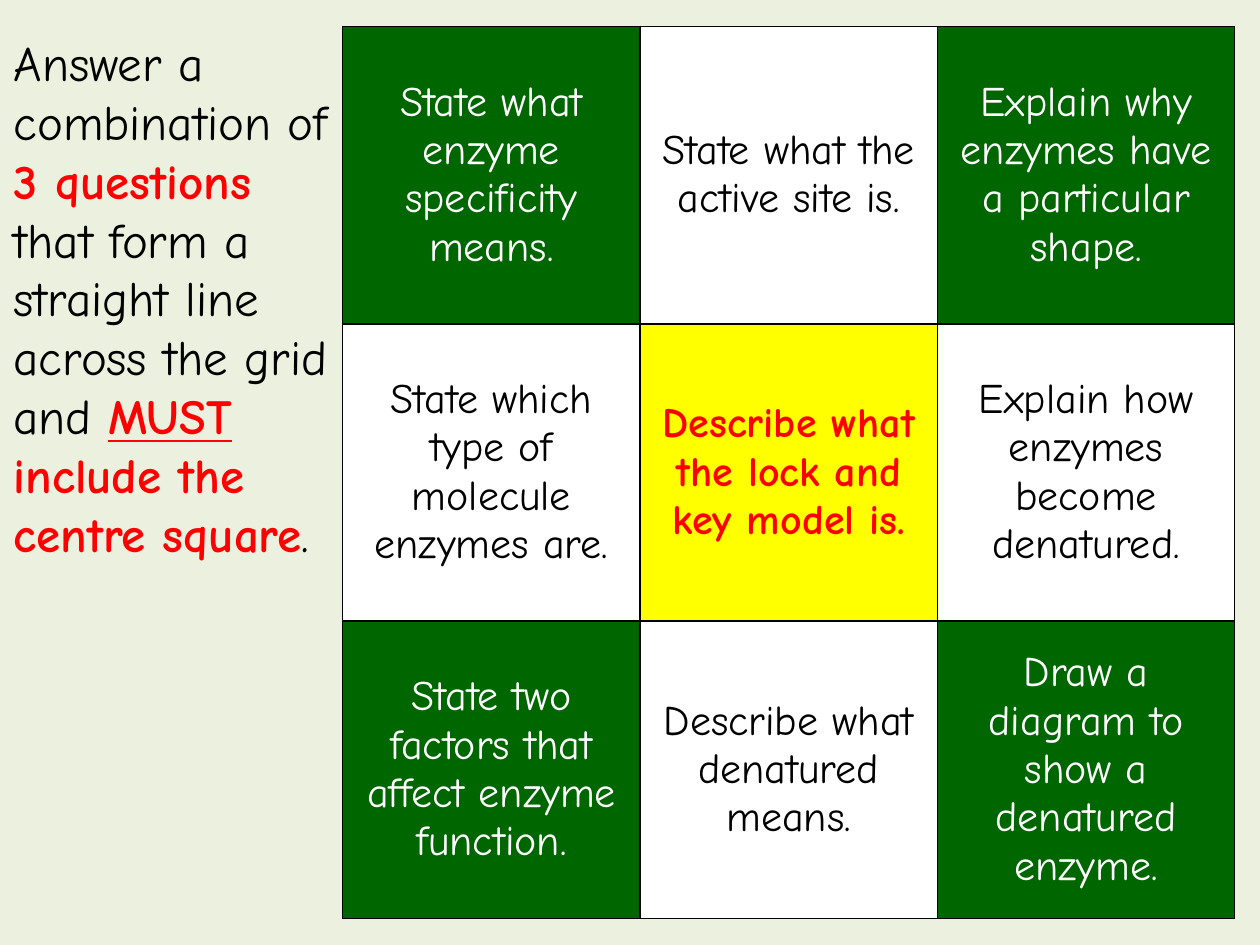
"""Build a slide with a three-by-three grid of enzyme questions."""
from lxml import etree
from pptx import Presentation
from pptx.dml.color import RGBColor
from pptx.enum.text import MSO_ANCHOR, MSO_AUTO_SIZE, PP_ALIGN
from pptx.oxml.ns import qn
from pptx.util import Inches, Pt

CENTER = PP_ALIGN.CENTER
MIDDLE = MSO_ANCHOR.MIDDLE
GROW = MSO_AUTO_SIZE.SHAPE_TO_FIT_TEXT

BACKGROUND = RGBColor(0xEB, 0xF1, 0xDE)
GREEN = RGBColor(0x00, 0x66, 0x00)
WHITE = RGBColor(0xFF, 0xFF, 0xFF)
YELLOW = RGBColor(0xFF, 0xFF, 0x00)
RED = RGBColor(0xFF, 0x00, 0x00)
BLACK = RGBColor(0x00, 0x00, 0x00)

FONT = "Comic Neue"
GRID_SIZE = 3
CELL_SIDE = Inches(2.36)

QUESTIONS = [
    ["State what enzyme specificity means.",
     "State what the active site is.",
     "Explain why enzymes have a particular shape."],
    ["State which type of molecule enzymes are.",
     "Describe what the lock and key model is.",
     "Explain how enzymes become denatured."],
    ["State two factors that affect enzyme function.",
     "Describe what denatured means.",
     "Draw a diagram to show a denatured enzyme."],
]

INSTRUCTIONS = [
    ("Answer a combination of ", False, False),
    ("3 questions ", True, False),
    ("that form a straight line across the grid and ", False, False),
    ("MUST", True, True),
    (" include the centre square", True, False),
    (".", False, False),
]


def add_span(para, text, size, color, bold):
    span = para.add_run()
    span.text = text
    span.font.name = FONT
    span.font.size = Pt(size)
    span.font.bold = bold
    span.font.color.rgb = color
    return span


def add_borders(cell):
    properties = cell._tc.get_or_add_tcPr()
    for index, side in enumerate(("lnL", "lnR", "lnT", "lnB")):
        line = etree.Element(qn(f"a:{side}"), w=str(Pt(1)))
        fill = etree.SubElement(line, qn("a:solidFill"))
        etree.SubElement(fill, qn("a:srgbClr"), val=str(BLACK))
        properties.insert(index, line)


deck = Presentation()
deck.slide_width = Inches(10)
deck.slide_height = Inches(7.5)
page = deck.slides.add_slide(deck.slide_layouts[6])
page.background.fill.solid()
page.background.fill.fore_color.rgb = BACKGROUND

grid = page.shapes.add_table(
    GRID_SIZE, GRID_SIZE, Inches(2.72), Inches(0.21),
    CELL_SIDE * GRID_SIZE, CELL_SIDE * GRID_SIZE).table
grid.first_row = False
grid.horz_banding = False
for column in grid.columns:
    column.width = CELL_SIDE

for row_index, questions in enumerate(QUESTIONS):
    grid.rows[row_index].height = CELL_SIDE
    for column_index, question in enumerate(questions):
        is_centre = row_index == column_index == 1
        if is_centre:
            fill_color, text_color = YELLOW, RED
        elif (row_index + column_index) % 2:
            fill_color, text_color = WHITE, BLACK
        else:
            fill_color, text_color = GREEN, WHITE
        cell = grid.cell(row_index, column_index)
        cell.fill.solid()
        cell.fill.fore_color.rgb = fill_color
        cell.vertical_anchor = MIDDLE
        add_borders(cell)
        para = cell.text_frame.paragraphs[0]
        para.alignment = CENTER
        add_span(para, question, 24, text_color, is_centre)

box = page.shapes.add_textbox(Inches(0.01), Inches(0.21), Inches(2.7), Inches(5.76))
box.text_frame.word_wrap = True
box.text_frame.auto_size = GROW
para = box.text_frame.paragraphs[0]
for text, emphasised, underlined in INSTRUCTIONS:
    span = add_span(para, text, 28, RED if emphasised else BLACK, emphasised)
    span.font.underline = underlined

deck.save("out.pptx")
